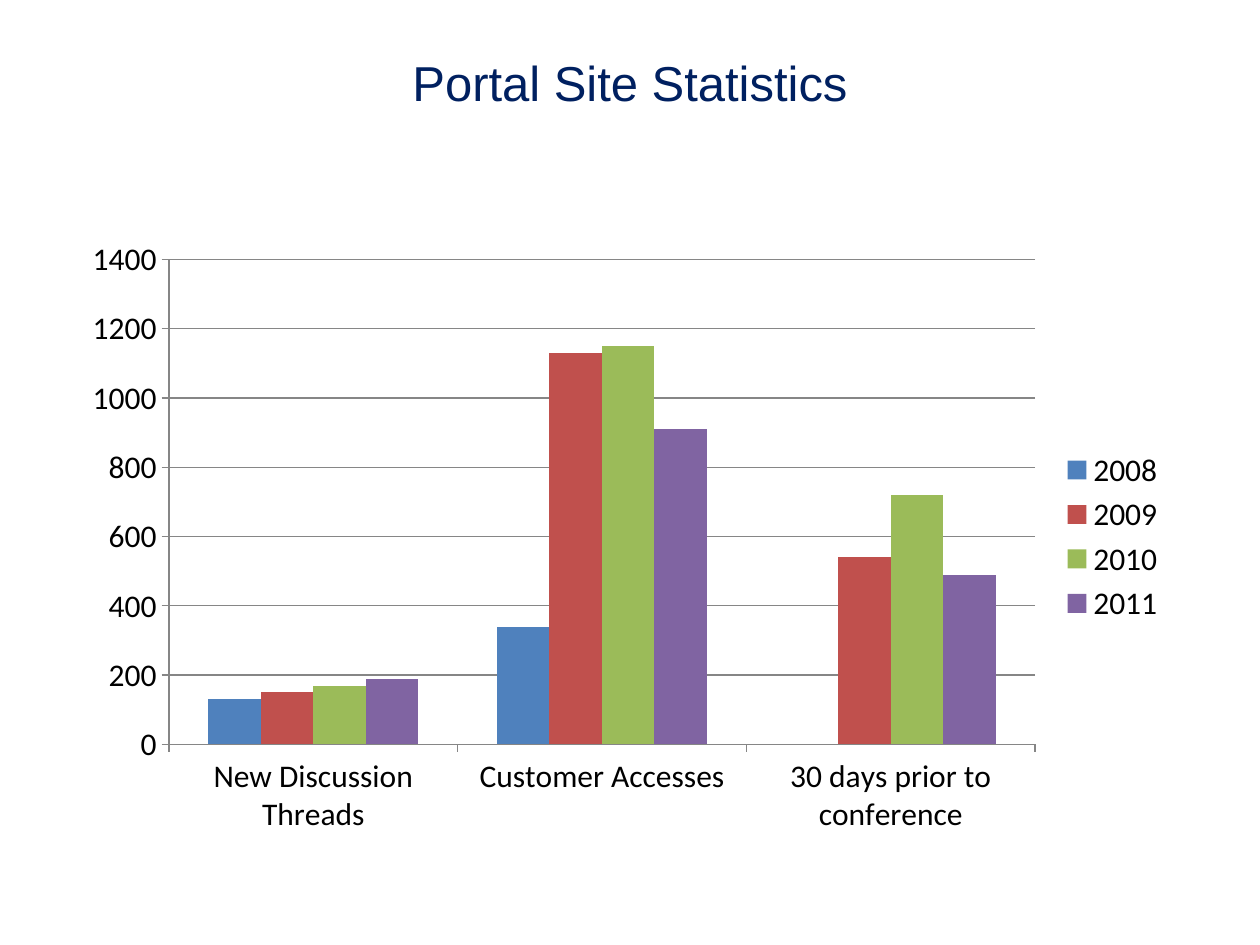
from pptx import Presentation
from pptx.chart.data import CategoryChartData
from pptx.dml.color import RGBColor
from pptx.enum.chart import XL_CHART_TYPE, XL_LEGEND_POSITION, XL_TICK_MARK
from pptx.enum.text import MSO_ANCHOR, PP_ALIGN
from pptx.util import Inches, Pt

NAVY = RGBColor(0x00, 0x20, 0x60)
BLACK = RGBColor(0x00, 0x00, 0x00)
GRAY = RGBColor(0x86, 0x86, 0x86)
BLUE = RGBColor(0x4F, 0x81, 0xBD)
RED = RGBColor(0xC0, 0x50, 0x4D)
GREEN = RGBColor(0x9B, 0xBB, 0x59)
PURPLE = RGBColor(0x80, 0x64, 0xA2)

METRICS = ["New Discussion Threads", "Customer Accesses", "30 days prior to conference"]
YEARS = [
    ("2008", (130, 340, None), BLUE),
    ("2009", (150, 1130, 540), RED),
    ("2010", (170, 1150, 720), GREEN),
    ("2011", (190, 910, 490), PURPLE),
]


def write_text(frame, text, *, font, size, color, align):
    frame.word_wrap = True
    frame.vertical_anchor = MSO_ANCHOR.MIDDLE
    paragraph = frame.paragraphs[0]
    paragraph.alignment = align
    run = paragraph.add_run()
    run.text = text
    run.font.name = font
    run.font.size = Pt(size)
    run.font.color.rgb = color


prs = Presentation()
prs.slide_width, prs.slide_height = Inches(10), Inches(7.5)
slide = prs.slides.add_slide(prs.slide_layouts[6])

heading = slide.shapes.add_textbox(Inches(0.5), Inches(0.3), Inches(9), Inches(0.7))
write_text(heading.text_frame, "Portal Site Statistics",
           font="Arial", size=28, color=NAVY, align=PP_ALIGN.CENTER)

statistics = CategoryChartData()
statistics.categories = METRICS
for year, counts, _ in YEARS:
    statistics.add_series(year, counts)

chart = slide.shapes.add_chart(
    XL_CHART_TYPE.COLUMN_CLUSTERED,
    Inches(0.56), Inches(1.81), Inches(8.79), Inches(4.9), statistics,
).chart
chart.has_title = False
chart.font.name = "Calibri"
chart.font.size = Pt(18)
chart.font.color.rgb = BLACK

chart.has_legend = True
chart.legend.position = XL_LEGEND_POSITION.RIGHT
chart.legend.include_in_layout = False

columns = chart.plots[0]
columns.vary_by_categories = False
columns.gap_width = 150
columns.overlap = 0
for series, (_, _, color) in zip(columns.series, YEARS):
    series.format.fill.solid()
    series.format.fill.fore_color.rgb = color
    series.invert_if_negative = False

count_axis = chart.value_axis
count_axis.minimum_scale = 0
count_axis.maximum_scale = 1400
count_axis.major_unit = 200
count_axis.has_major_gridlines = True
for line in (count_axis.major_gridlines.format.line,
             count_axis.format.line, chart.category_axis.format.line):
    line.color.rgb = GRAY
    line.width = Pt(0.75)
for axis in (count_axis, chart.category_axis):
    axis.major_tick_mark = XL_TICK_MARK.OUTSIDE
    axis.minor_tick_mark = XL_TICK_MARK.NONE

prs.save("out.pptx")
